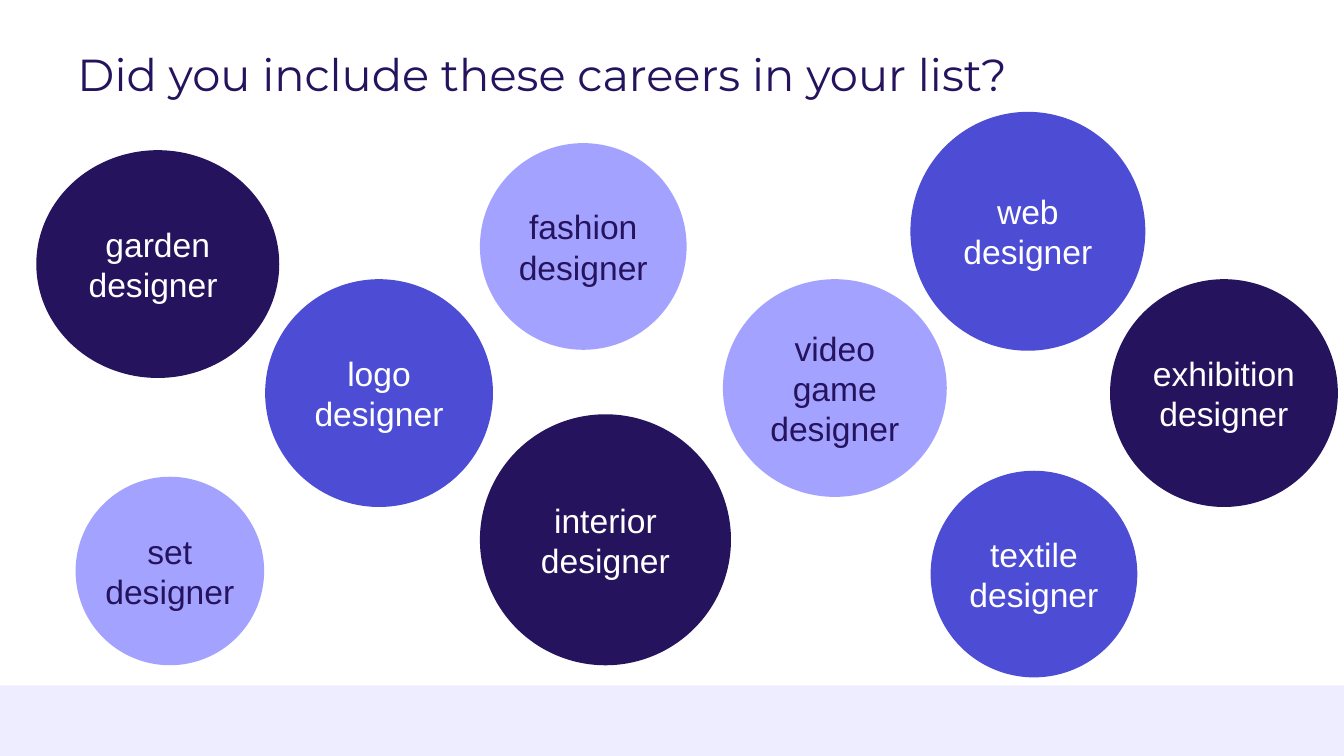
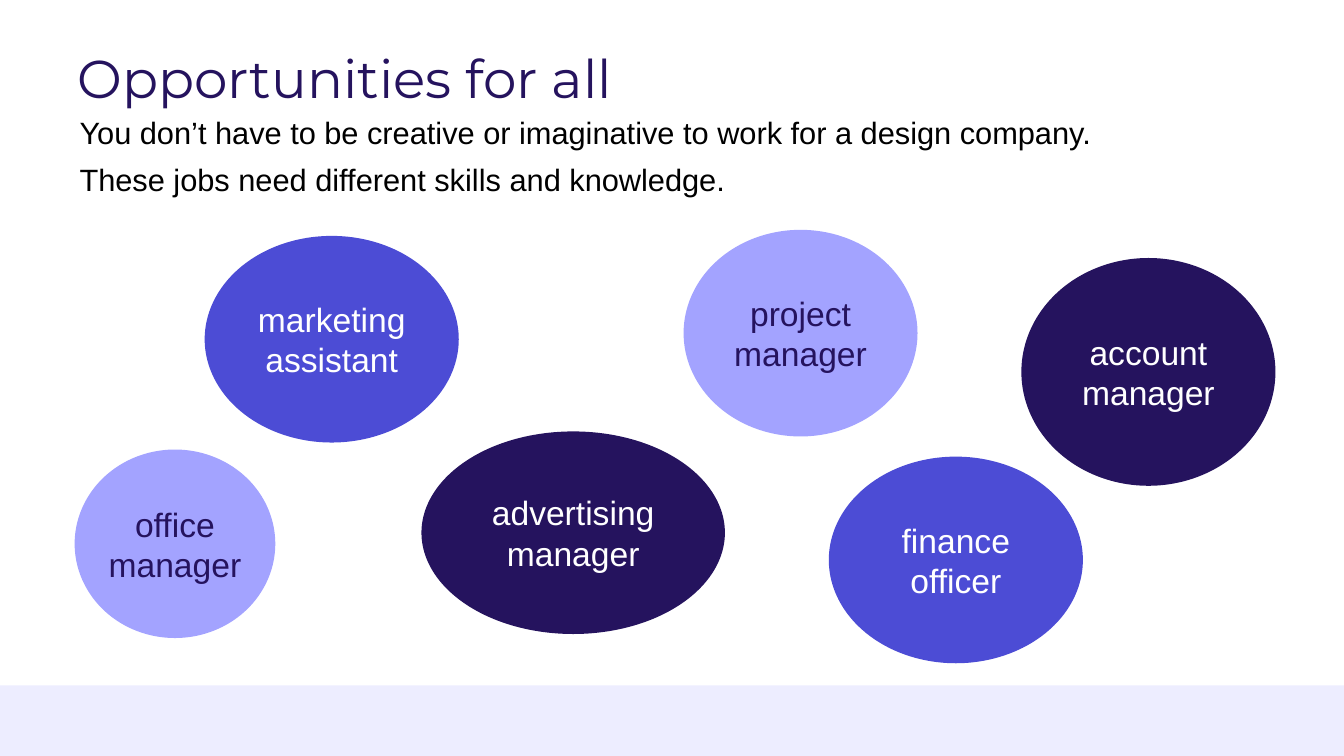
"""Build two slides of design careers shown as coloured bubbles."""
from dataclasses import dataclass

from pptx import Presentation
from pptx.dml.color import RGBColor
from pptx.enum import shapes, text
from pptx.presentation import Presentation as Deck
from pptx.slide import Slide
from pptx.text.text import TextFrame
from pptx.util import Inches, Pt


@dataclass(frozen=True)
class Theme:
    navy: str = "25135E"
    blue: str = "4C4CD5"
    lilac: str = "A3A3FF"
    band: str = "EDEDFF"
    white: str = "FFFFFF"
    black: str = "000000"
    title_font: str = "Montserrat"
    body_font: str = "Arial"
    bubble_size: int = 24
    body_size: int = 22


@dataclass(frozen=True)
class Bubble:
    label: str
    fill: str
    left: float
    top: float
    width: float
    height: float
    inset: float = 0


T = Theme()
WIDTH, HEIGHT, BAND_TOP = 13.33, 7.5, 6.8

CAREERS = [
    Bubble("logo\ndesigner", T.blue, 2.63, 2.77, 2.26, 2.26),
    Bubble("set designer", T.lilac, 0.75, 4.73, 1.87, 1.87),
    Bubble("interior designer", T.navy, 4.76, 4.11, 2.49, 2.49, 0.04),
    Bubble("fashion designer", T.lilac, 4.76, 1.42, 2.05, 2.05),
    Bubble("textile designer", T.blue, 9.23, 4.67, 2.05, 2.05),
    Bubble("exhibition designer", T.navy, 11.01, 2.77, 2.26, 2.26),
    Bubble("garden designer ", T.navy, 0.36, 1.49, 2.41, 2.26),
    Bubble("video game designer", T.lilac, 7.17, 2.77, 2.22, 2.16),
    Bubble("web\ndesigner", T.blue, 9.03, 1.11, 2.33, 2.37),
]

JOBS = [
    Bubble("office manager", T.lilac, 0.74, 4.46, 1.99, 1.87),
    Bubble("advertising manager", T.navy, 4.18, 4.28, 3.01, 2.01, 0.04),
    Bubble("project manager", T.lilac, 6.78, 2.28, 2.32, 2.05),
    Bubble("marketing assistant", T.blue, 2.03, 2.34, 2.52, 2.05),
    Bubble("account manager", T.navy, 10.13, 2.56, 2.52, 2.26),
    Bubble("finance officer", T.blue, 8.22, 4.53, 2.52, 2.05),
]

INTRO = (
    "You don’t have to be creative or imaginative to work for a design company.\n"
    "These jobs need different skills and knowledge."
)


def write(tf: TextFrame, content: str, *, size: float, color: str,
          font: str = T.body_font, align: text.PP_ALIGN = text.PP_ALIGN.LEFT,
          anchor: text.MSO_ANCHOR = text.MSO_ANCHOR.TOP,
          spacing: float = 1.0, gap: float = 0) -> None:
    """Write one formatted paragraph for each line of the content."""
    tf.word_wrap = True
    tf.vertical_anchor = anchor
    for i, line in enumerate(content.split("\n")):
        p = tf.paragraphs[0] if i == 0 else tf.add_paragraph()
        p.alignment = align
        p.line_spacing = spacing
        p.space_before = Pt(gap if i else 0)
        r = p.add_run()
        r.text = line
        r.font.name = font
        r.font.size = Pt(size)
        r.font.color.rgb = RGBColor.from_string(color)


def add_filled(s: Slide, kind: shapes.MSO_SHAPE, left: float, top: float,
               width: float, height: float, fill: str) -> TextFrame:
    """Add a flat shape without outline and return its text frame."""
    sp = s.shapes.add_shape(kind, Inches(left), Inches(top), Inches(width), Inches(height))
    sp.shadow.inherit = False
    sp.fill.solid()
    sp.fill.fore_color.rgb = RGBColor.from_string(fill)
    sp.line.fill.background()
    return sp.text_frame


def add_text(s: Slide, left: float, top: float, width: float, height: float) -> TextFrame:
    """Add a text box and return its text frame."""
    sp = s.shapes.add_textbox(Inches(left), Inches(top), Inches(width), Inches(height))
    return sp.text_frame


def add_bubble(s: Slide, b: Bubble) -> None:
    """Draw one labelled bubble, dark text on lilac and white elsewhere."""
    tf = add_filled(s, shapes.MSO_SHAPE.OVAL, b.left, b.top, b.width, b.height, b.fill)
    tf.margin_left = tf.margin_right = tf.margin_top = tf.margin_bottom = Inches(b.inset)
    write(tf, b.label, size=T.bubble_size,
          color=T.navy if b.fill == T.lilac else T.white,
          align=text.PP_ALIGN.CENTER, anchor=text.MSO_ANCHOR.MIDDLE)


def add_slide(prs: Deck, title: str, title_size: float, bubbles: list[Bubble]) -> Slide:
    """Add a slide with the footer band, a title and its bubbles."""
    s = prs.slides.add_slide(prs.slide_layouts[6])
    add_filled(s, shapes.MSO_SHAPE.RECTANGLE, 0, BAND_TOP, WIDTH, HEIGHT - BAND_TOP, T.band)
    write(add_text(s, 0.67, 0.47, 12.09, 0.65), title, size=title_size,
          color=T.navy, font=T.title_font, spacing=0.9)
    for b in bubbles:
        add_bubble(s, b)
    return s


def main() -> None:
    """Build and save the presentation."""
    prs = Presentation()
    prs.slide_width, prs.slide_height = Inches(WIDTH), Inches(HEIGHT)
    add_slide(prs, "Did you include these careers in your list?", 32, CAREERS)
    s = add_slide(prs, "Opportunities for all", 38, JOBS)
    write(add_text(s, 0.69, 1.12, 10.31, 0.91), INTRO, size=T.body_size,
          color=T.black, spacing=0.9, gap=10)
    prs.save("out.pptx")


if __name__ == "__main__":
    main()
